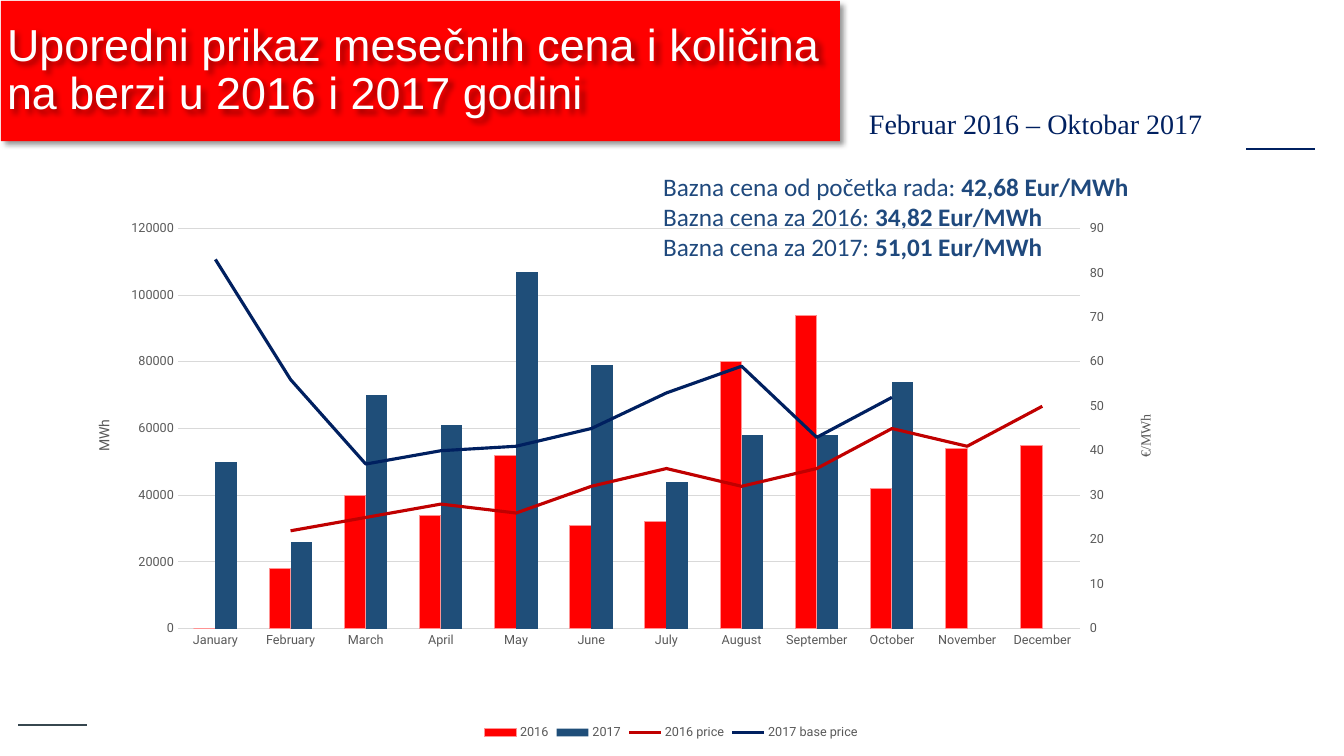
from pptx import Presentation
from pptx.chart.axis import ValueAxis
from pptx.chart.data import CategoryChartData
from pptx.dml.color import RGBColor
from pptx.enum import chart as kinds, shapes, text
from pptx.oxml import parse_xml
from pptx.util import Inches, Pt

RED = RGBColor(0xFF, 0x00, 0x00)
PINK = RGBColor(0xFF, 0x93, 0x93)
DARK_RED = RGBColor(0xC0, 0x00, 0x00)
STEEL = RGBColor(0x1F, 0x4E, 0x79)
NAVY = RGBColor(0x00, 0x20, 0x60)
BLUE = RGBColor(0x1F, 0x49, 0x7D)
SLATE = RGBColor(0x37, 0x47, 0x4F)
GRAY = RGBColor(0x59, 0x59, 0x59)
LIGHT = RGBColor(0xD9, 0xD9, 0xD9)
WHITE = RGBColor(0xFF, 0xFF, 0xFF)
BLACK = RGBColor(0x00, 0x00, 0x00)
A = "http://schemas.openxmlformats.org/drawingml/2006/main"
C = "http://schemas.openxmlformats.org/drawingml/2006/chart"
SHADOW = (f'<a:effectLst xmlns:a="{A}"><a:outerShdw blurRad="50800" dist="38100" '
          'dir="2700000" algn="tl" rotWithShape="0"><a:srgbClr val="000000">'
          '<a:alpha val="40000"/></a:srgbClr></a:outerShdw></a:effectLst>')


def style(font, name, size, color, bold=False):
    for key, value in {"name": name, "size": Pt(size), "bold": bold}.items():
        setattr(font, key, value)
    font.color.rgb = color


def layout_xml(inner, **place):
    target = '<c:layoutTarget val="inner"/>' if inner else ""
    parts = "".join(f'<c:{key} val="{value}"/>' for key, value in place.items())
    return parse_xml(f'<c:layout xmlns:c="{C}"><c:manualLayout>{target}'
                     f'<c:xMode val="edge"/><c:yMode val="edge"/>{parts}'
                     '</c:manualLayout></c:layout>')


deck = Presentation()
deck.slide_width, deck.slide_height = Inches(13.33), Inches(7.5)
page = deck.slides.add_slide(deck.slide_layouts[5])

band = page.shapes.add_shape(shapes.MSO_SHAPE.RECTANGLE, Inches(0.01), Inches(0.01),
                             Inches(8.32), Inches(1.39))
band.fill.solid()
band.fill.fore_color.rgb = RED
band.line.fill.background()
band._element.spPr.append(parse_xml(SHADOW))

for left, top, color in [(0.18, 7.19, SLATE), (12.36, 1.48, NAVY)]:
    rule = page.shapes.add_connector(shapes.MSO_CONNECTOR.STRAIGHT, Inches(left), Inches(top),
                                     Inches(left + 0.68), Inches(top))
    rule.line.color.rgb = color
    rule.line.width = Pt(1.5)
    rule._element.spPr.append(parse_xml(f'<a:effectLst xmlns:a="{A}"/>'))

title = page.shapes.title
for key, value in {"left": -0.03, "top": 0.17, "width": 8.37, "height": 1.07}.items():
    setattr(title, key, Inches(value))
title.fill.background()
title._element.spPr.append(parse_xml(SHADOW))
rule._element.addnext(title._element)
frame = title.text_frame
frame.word_wrap = True
frame.auto_size = text.MSO_AUTO_SIZE.SHAPE_TO_FIT_TEXT
frame.vertical_anchor = text.MSO_ANCHOR.MIDDLE
para = frame.paragraphs[0]
para.alignment = text.PP_ALIGN.LEFT
para.line_spacing = 0.9
span = para.add_run()
span.text = "Uporedni prikaz mesečnih cena i količina na berzi u 2016 i 2017 godini"
style(span.font, "Arial", 32, WHITE)

notes = [
    ((8.52, 1.01, 4.06, 0.44), "Times New Roman", 20, NAVY,
     [("Februar 2016 – Oktobar 2017", "")]),
    ((6.48, 1.65, 5.54, 1.01), "Calibri", 18, BLUE,
     [("Bazna cena od početka rada: ", "42,68 Eur/MWh"),
      ("Bazna cena za 2016: ", "34,82 Eur/MWh"),
      ("Bazna cena za 2017: ", "51,01 Eur/MWh")]),
]
for place, name, size, color, lines in notes:
    box = page.shapes.add_textbox(*map(Inches, place))
    frame = box.text_frame
    frame.word_wrap = True
    frame.auto_size = text.MSO_AUTO_SIZE.SHAPE_TO_FIT_TEXT
    for index, (label, price) in enumerate(lines):
        para = frame.add_paragraph() if index else frame.paragraphs[0]
        for words, bold in [(label, False), (price, True)]:
            if words:
                span = para.add_run()
                span.text = words
                style(span.font, name, size, color, bold)

data = CategoryChartData()
data.categories = ["January", "February", "March", "April", "May", "June", "July",
                   "August", "September", "October", "November", "December"]
data.add_series("2016", [0, 18000, 40000, 34000, 52000, 31000, 32000, 80000, 94000,
                         42000, 54000, 55000])
data.add_series("2017", [50000, 26000, 70000, 61000, 107000, 79000, 44000, 58000, 58000,
                         74000, None, None])
data.add_series("2016 price", [None, 22, 25, 28, 26, 32, 36, 32, 36, 45, 41, 50])
data.add_series("2017 base price", [83, 56, 37, 40, 41, 45, 53, 59, 43, 52, None, None])

chart = page.shapes.add_chart(kinds.XL_CHART_TYPE.COLUMN_CLUSTERED, Inches(0.86), Inches(1.24),
                              Inches(11.59), Inches(6.14), data).chart
style(chart.font, "Roboto", 10, BLACK)
chart.has_title = False
chart.has_legend = True
chart.legend.position = kinds.XL_LEGEND_POSITION.BOTTOM
chart.legend.include_in_layout = False
style(chart.legend.font, "Roboto", 9, GRAY)

bars = chart.plots[0]
bars.gap_width = 150
bars.overlap = 0
bars.vary_by_categories = False
area = chart._chartSpace.chart.plotArea
prices = parse_xml(f'<c:lineChart xmlns:c="{C}"><c:grouping val="standard"/>'
                   '<c:varyColors val="0"/><c:marker val="1"/>'
                   '<c:axId val="5001"/><c:axId val="5002"/></c:lineChart>')
for spot, series in enumerate(list(bars.series)[2:]):
    item = series._element
    for flag in item.findall(f"{{{C}}}invertIfNegative"):
        item.remove(flag)
    prices.insert(2 + spot, item)
bars._element.addnext(prices)

right_xml = parse_xml(
    f'<c:valAx xmlns:c="{C}"><c:axId val="5002"/><c:scaling/><c:delete val="0"/>'
    '<c:axPos val="r"/><c:numFmt formatCode="General" sourceLinked="0"/>'
    '<c:majorTickMark val="out"/><c:minorTickMark val="none"/><c:tickLblPos val="nextTo"/>'
    '<c:crossAx val="5001"/><c:crosses val="max"/><c:crossBetween val="between"/></c:valAx>')
hidden_xml = parse_xml(
    f'<c:catAx xmlns:c="{C}"><c:axId val="5001"/><c:scaling/><c:delete val="1"/>'
    '<c:axPos val="b"/><c:majorTickMark val="none"/><c:minorTickMark val="none"/>'
    '<c:tickLblPos val="nextTo"/><c:crossAx val="5002"/><c:crosses val="autoZero"/></c:catAx>')
left_axis = chart.value_axis
right_axis = ValueAxis(right_xml)
left_axis._element.addnext(right_xml)
right_xml.addnext(hidden_xml)
for old in area.findall(f"{{{C}}}layout"):
    area.remove(old)
area.insert(0, layout_xml(True, x=0.078, y=0.167, w=0.772, h=0.647))

months = chart.category_axis
months.major_tick_mark = kinds.XL_TICK_MARK.NONE
months.format.line.color.rgb = LIGHT
months.format.line.width = Pt(0.75)
style(months.tick_labels.font, "Roboto", 9, GRAY)

left_axis.major_gridlines.format.line.color.rgb = LIGHT
left_axis.major_gridlines.format.line.width = Pt(0.75)
left_axis.major_tick_mark = kinds.XL_TICK_MARK.NONE
left_axis.tick_labels.number_format = "General"
left_axis.tick_labels.number_format_is_linked = False
for axis, top, step, unit, name, x, y in [
        (left_axis, 120000, 20000, "MWh", "Roboto", 0.005, 0.472),
        (right_axis, 90, 10, "€/MWh", "Times New Roman", 0.896, 0.464)]:
    for key, value in {"minimum_scale": 0, "maximum_scale": top, "major_unit": step}.items():
        setattr(axis, key, value)
    axis.format.line.fill.background()
    style(axis.tick_labels.font, "Roboto", 9, GRAY)
    frame = axis.axis_title.text_frame
    frame._txBody.bodyPr.set("rot", "-5400000")
    frame._txBody.bodyPr.set("vert", "horz")
    span = frame.paragraphs[0].add_run()
    span.text = unit
    style(span.font, name, 10, GRAY)
    caption = axis.axis_title._element
    for old in caption.findall(f"{{{C}}}layout"):
        caption.remove(old)
    caption.find(f"{{{C}}}tx").addnext(layout_xml(False, x=x, y=y))

for series, color in zip(bars.series, [RED, STEEL]):
    series.format.fill.solid()
    series.format.fill.fore_color.rgb = color
bars.series[0].format.line.color.rgb = PINK
bars.series[0].format.line.width = Pt(0.75)
for series, color in zip(chart.plots[1].series, [DARK_RED, NAVY]):
    series.format.line.color.rgb = color
    series.format.line.width = Pt(2.25)
    series.marker.style = kinds.XL_MARKER_STYLE.NONE
    series.smooth = False

deck.save("out.pptx")
